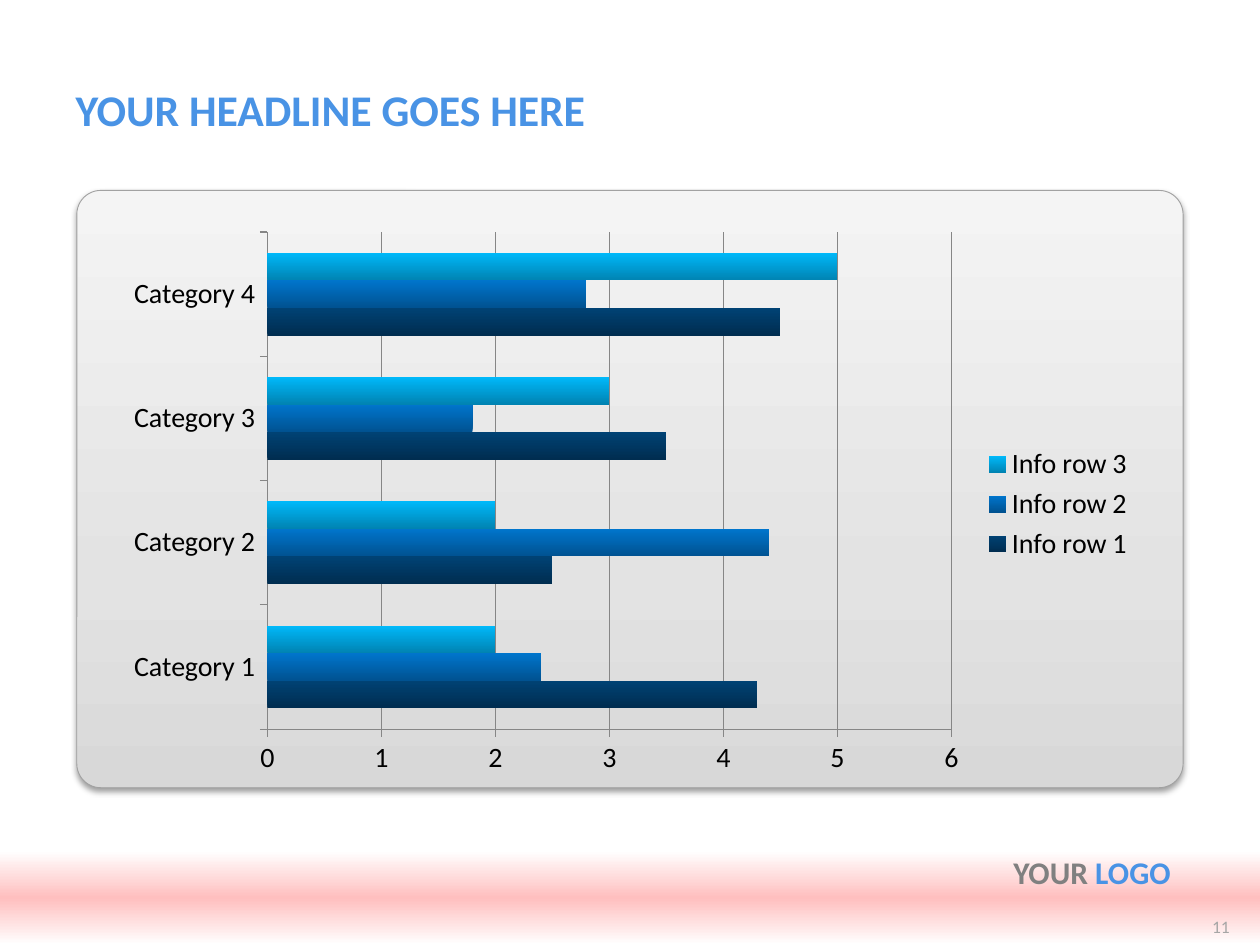
"""Builds a headline slide with a clustered bar chart on a shaded panel."""
from copy import deepcopy

from lxml.etree import SubElement
from pptx import Presentation
from pptx.chart.data import CategoryChartData as Data
from pptx.dml.color import RGBColor as RGB
from pptx.enum.chart import XL_CHART_TYPE as Kind, XL_LEGEND_POSITION as Side, XL_TICK_MARK as Tick
from pptx.enum.shapes import MSO_SHAPE as Form
from pptx.enum.text import MSO_ANCHOR as Anchor, MSO_AUTO_SIZE as Fit, PP_ALIGN as Align
from pptx.oxml import parse_xml
from pptx.oxml.ns import nsdecls, qn
from pptx.util import Cm, Pt

COLORS = {"blue": "4993E5", "gray": "808080", "pale": "A6A6A6", "edge": "A1A1A1",
          "grid": "868686", "text": "000000"}


def paint(fill, stops):
    fill.gradient()
    fill.gradient_angle = 90
    for stop, (place, color) in zip(fill.gradient_stops, stops):
        stop.position = place
        stop.color.rgb = RGB.from_string(color)


def write(frame, runs, size, bold, align, anchor):
    frame.word_wrap = True
    frame.auto_size = Fit.NONE
    frame.vertical_anchor = anchor
    line = frame.paragraphs[0]
    line.alignment = align
    for text, color in runs:
        run = line.add_run()
        run.text = text
        for name, value in {"name": "Calibri", "size": Pt(size), "bold": bold}.items():
            setattr(run.font, name, value)
        run.font.color.rgb = RGB.from_string(COLORS[color])


deck = Presentation()
deck.slide_width, deck.slide_height = Cm(25.4), Cm(19.05)
slide = deck.slides.add_slide(deck.slide_layouts[5])
shapes = slide.shapes
title = shapes.title

plates = [
    (Form.ROUNDED_RECTANGLE, (1.55, 3.84, 22.3, 12.04),
     [(0, "D8D8D8"), (0.35, "E3E3E3"), (1, "F4F4F4")]),
    (Form.RECTANGLE, (0, 17.15, 25.4, 1.9),
     [(0, "FFFFFF"), (0.5, "FFBFBF"), (1, "FFFFFF")]),
]
made = []
for form, box, stops in plates:
    plate = shapes.add_shape(form, *map(Cm, box))
    plate.shadow.inherit = False
    plate.line.fill.background()
    plate.fill.gradient()
    grades = plate.element.spPr.find(".//" + qn("a:gsLst"))
    grades.append(deepcopy(grades[-1]))
    paint(plate.fill, stops)
    made.append(plate)

panel = made[0]
panel.adjustments[0] = 0.04
panel.line.color.rgb = RGB.from_string(COLORS["edge"])
panel.line.width = Pt(0.5)
panel.element.spPr.find(qn("a:effectLst")).append(parse_xml(
    f'<a:outerShdw {nsdecls("a")} blurRad="{Pt(3.5)}" dist="{Pt(2)}" dir="5400000" rotWithShape="0">'
    '<a:srgbClr val="000000"><a:alpha val="38000"/></a:srgbClr></a:outerShdw>'))

title.left, title.top, title.width, title.height = map(Cm, (1.27, 1.5, 22.86, 1.4))
write(title.text_frame, [("YOUR HEADLINE GOES HERE", "blue")], 25, True, Align.LEFT, Anchor.MIDDLE)

data = Data()
data.categories = [f"Category {n}" for n in range(1, 5)]
rows = [
    ("Info row 1", (4.3, 2.5, 3.5, 4.5), "002D50", "004274"),
    ("Info row 2", (2.4, 4.4, 1.8, 2.8), "005291", "0075CC"),
    ("Info row 3", (2, 2, 3, 5), "0083B2", "00B9FA"),
]
for name, values, *shades in rows:
    data.add_series(name, values)
chart = shapes.add_chart(Kind.BAR_CLUSTERED, *map(Cm, (2.31, 4.45, 20.8, 11.43)), data).chart
chart.has_title = False
chart.font.name = "Calibri"
chart.font.size = Pt(18)
chart.font.color.rgb = RGB.from_string(COLORS["text"])

plot = chart.plots[0]
plot.vary_by_categories = False
plot.gap_width = 150
plot.overlap = 0
for series, (name, values, dark, light) in zip(plot.series, rows):
    paint(series.format.fill, [(0, dark), (1, light)])

worth = chart.value_axis
worth.minimum_scale, worth.maximum_scale, worth.major_unit = 0, 6, 1
worth.has_major_gridlines = True
chart.category_axis.has_major_gridlines = False
for axis in (chart.category_axis, worth):
    axis.major_tick_mark = Tick.CROSS if axis is worth else Tick.OUTSIDE
    axis.major_tick_mark = Tick.OUTSIDE
    axis.minor_tick_mark = Tick.NONE
    axis.tick_labels.font.size = Pt(16)
for part in (chart.category_axis, worth, worth.major_gridlines):
    part.format.line.color.rgb = RGB.from_string(COLORS["grid"])
    part.format.line.width = Pt(0.75)

chart.has_legend = True
chart.legend.position = Side.RIGHT
chart.legend.include_in_layout = False
chart.legend.font.size = Pt(16)

area = chart.element.find(".//" + qn("c:plotArea"))
for old in area.findall(qn("c:layout")):
    area.remove(old)
layout = parse_xml(f'<c:layout {nsdecls("c")}><c:manualLayout/></c:layout>')
area.insert(0, layout)
sizes = {"layoutTarget": "inner", "xMode": "edge", "yMode": "edge",
         "x": "0.148", "y": "0.02", "w": "0.663", "h": "0.877"}
for tag, value in sizes.items():
    SubElement(layout[0], qn("c:" + tag)).set("val", value)

notes = [
    ((1.27, 17.07, 22.58, 1.4), [("YOUR", "gray"), (" LOGO", "blue")], 18, True, Anchor.TOP),
    ((23.85, 18.29, 1.19, 0.76), [("11", "pale")], 10, False, Anchor.MIDDLE),
]
for box, runs, size, bold, anchor in notes:
    write(shapes.add_textbox(*map(Cm, box)).text_frame, runs, size, bold, Align.RIGHT, anchor)

deck.save("out.pptx")
